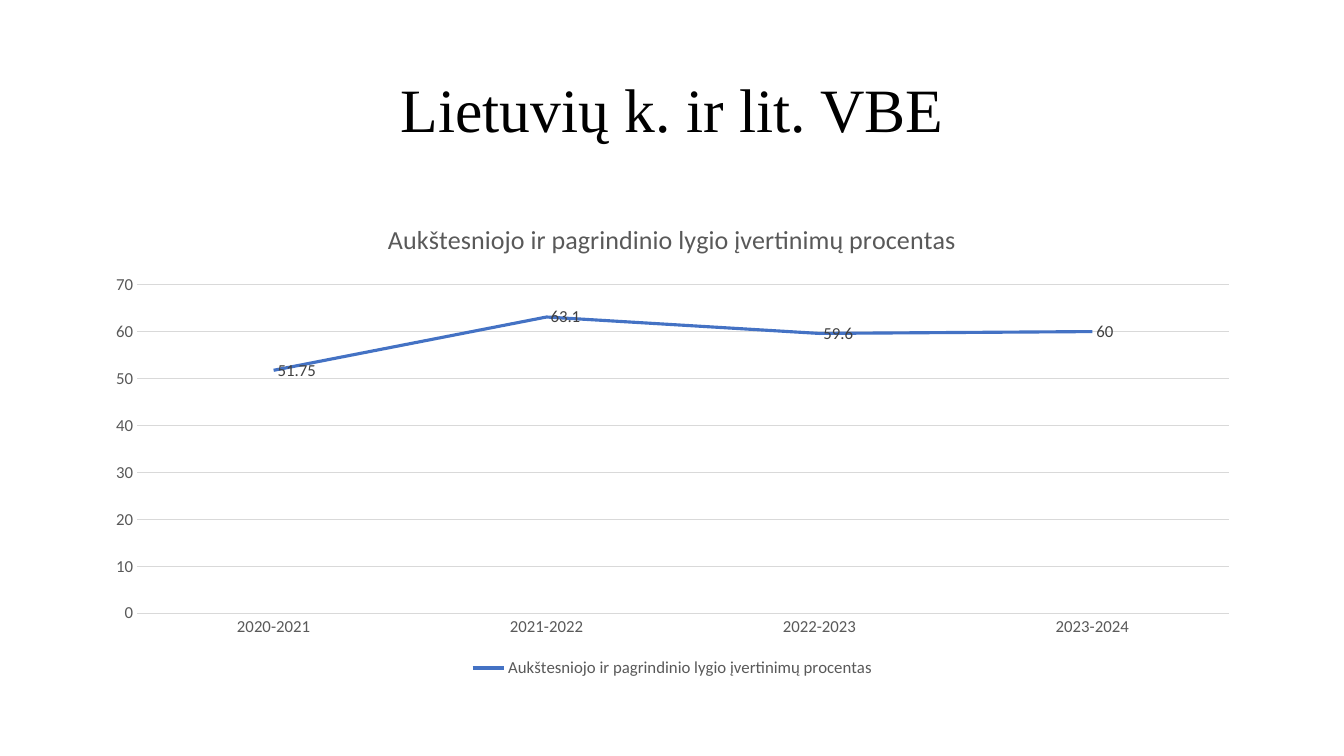
"""Build a slide with a line chart of exam results by school year."""
from dataclasses import dataclass

from pptx import Presentation, util as u
from pptx.chart.data import CategoryChartData
from pptx.dml.color import RGBColor
from pptx.enum import chart as ch, text as tx

HEAD = "Lietuvių k. ir lit. VBE"
NAME = "Aukštesniojo ir pagrindinio lygio įvertinimų procentas"
MARKS = {
    "2020-2021": 51.75,
    "2021-2022": 63.1,
    "2022-2023": 59.6,
    "2023-2024": 60,
}
SIZE = (1344, 756)
HEAD_BOX = (93, 40, 1159, 146)
PLOT_BOX = (93, 202, 1159, 480)
SCALE = 914400 / 100.8


@dataclass(frozen=True)
class Theme:
    """Colours, fonts and type sizes."""
    ink: str = "000000"
    gray: str = "595959"
    dark: str = "404040"
    grid: str = "D9D9D9"
    blue: str = "4472C4"
    serif: str = "Times New Roman"
    sans: str = "Calibri"
    head: float = 44
    title: float = 18.6
    small: float = 12
    thin: float = 0.75
    thick: float = 2.25


THEME = Theme()


def px(*vals):
    """Turn px lengths into EMU."""
    return [u.Emu(round(v * SCALE)) for v in vals]


def put(item, **form):
    """Set each format value on an object."""
    for key, val in form.items():
        setattr(item, key, val)


def style(font, size, tint, face=THEME.sans):
    """Give a font its size, colour and face."""
    put(font, size=u.Pt(size), name=face, bold=False)
    font.color.rgb = RGBColor.from_string(tint)


def stroke(line, tint, width):
    """Give a line its colour and width."""
    line.color.rgb = RGBColor.from_string(tint)
    line.width = u.Pt(width)


def add_head(slide):
    """Add the slide heading."""
    frame = slide.shapes.add_textbox(*px(*HEAD_BOX)).text_frame
    put(frame, word_wrap=True, vertical_anchor=tx.MSO_ANCHOR.MIDDLE)
    para = frame.paragraphs[0]
    put(para, text=HEAD, alignment=tx.PP_ALIGN.CENTER, line_spacing=0.9)
    style(para.runs[0].font, THEME.head, THEME.ink, THEME.serif)


def add_plot(slide):
    """Add the line chart."""
    data = CategoryChartData()
    data.categories = list(MARKS)
    data.add_series(NAME, list(MARKS.values()))
    kind = ch.XL_CHART_TYPE.LINE
    chart = slide.shapes.add_chart(kind, *px(*PLOT_BOX), data).chart
    style(chart.font, THEME.small, THEME.gray)

    put(chart, has_title=True, has_legend=True)
    frame = chart.chart_title.text_frame
    frame.text = NAME
    style(frame.paragraphs[0].runs[0].font, THEME.title, THEME.gray)
    chart.chart_title.include_in_layout = False
    put(chart.legend, position=ch.XL_LEGEND_POSITION.BOTTOM,
        include_in_layout=False)
    style(chart.legend.font, THEME.small, THEME.gray)

    cats, vals = chart.category_axis, chart.value_axis
    for axis in (cats, vals):
        put(axis, major_tick_mark=ch.XL_TICK_MARK.NONE,
            minor_tick_mark=ch.XL_TICK_MARK.NONE)
        style(axis.tick_labels.font, THEME.small, THEME.gray)
    stroke(cats.format.line, THEME.grid, THEME.thin)
    put(vals, minimum_scale=0, maximum_scale=70, major_unit=10,
        has_major_gridlines=True)
    vals.format.line.fill.background()
    stroke(vals.major_gridlines.format.line, THEME.grid, THEME.thin)

    chart.plots[0].vary_by_categories = False
    row = chart.plots[0].series[0]
    row.smooth = False
    row.marker.style = ch.XL_MARKER_STYLE.NONE
    stroke(row.format.line, THEME.blue, THEME.thick)
    put(row.data_labels, show_value=True,
        position=ch.XL_LABEL_POSITION.RIGHT)
    style(row.data_labels.font, THEME.small, THEME.dark)


def main():
    """Make the slide and save it."""
    deck = Presentation()
    wide, high = px(*SIZE)
    put(deck, slide_width=wide, slide_height=high)
    slide = deck.slides.add_slide(deck.slide_layouts[6])
    add_head(slide)
    add_plot(slide)
    deck.save("out.pptx")


if __name__ == "__main__":
    main()
